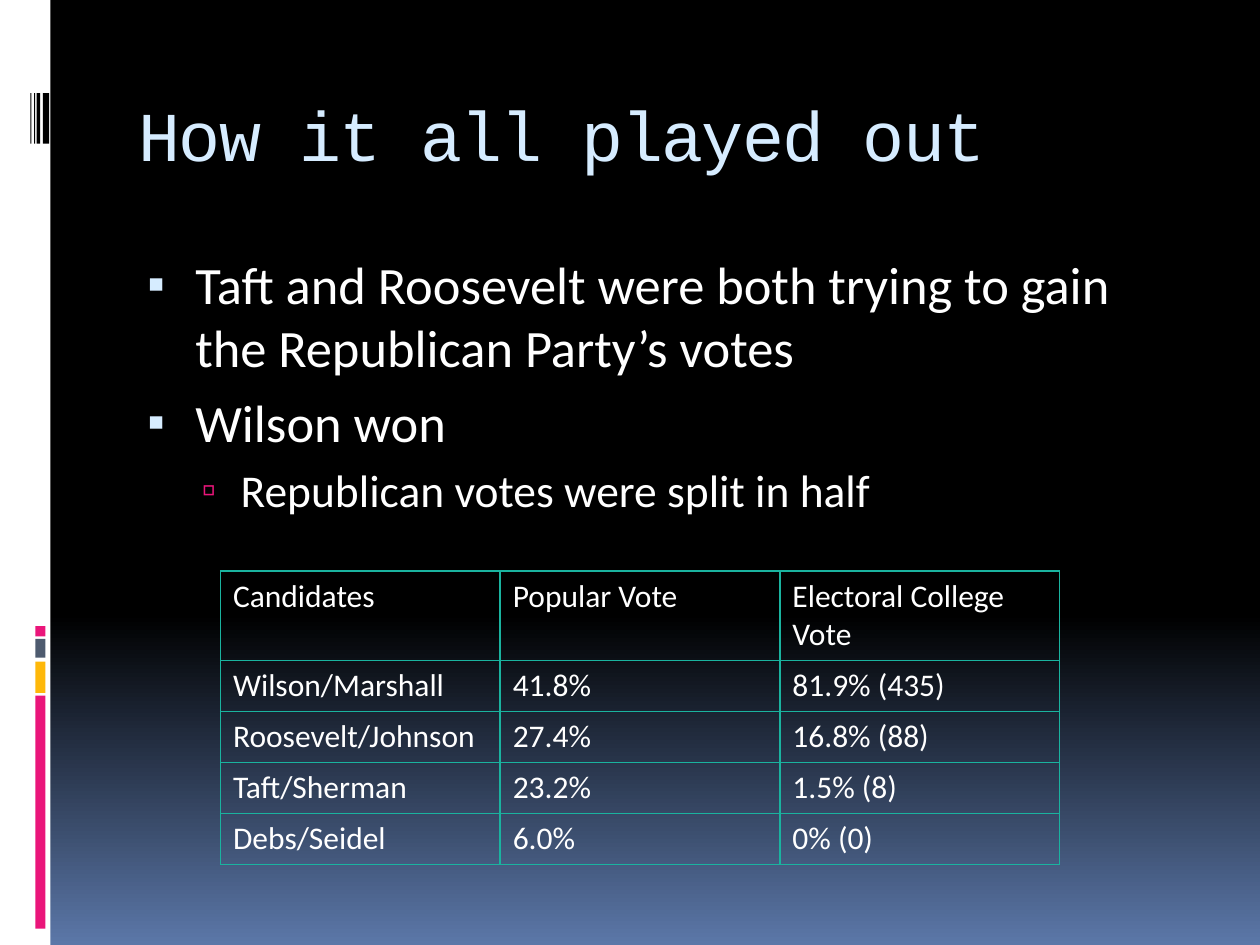
from lxml.etree import SubElement
from pptx import Presentation
from pptx.dml.color import RGBColor
from pptx.enum.shapes import MSO_SHAPE
from pptx.enum.text import MSO_ANCHOR, MSO_AUTO_SIZE, PP_ALIGN
from pptx.oxml.ns import qn
from pptx.util import Inches, Pt


def color(hex_value):
    return RGBColor.from_string(hex_value)


def style(font, name, size, hex_value):
    for key, value in {"name": name, "size": Pt(size), "bold": False}.items():
        setattr(font, key, value)
    font.color.rgb = color(hex_value)


prs = Presentation()
prs.slide_width, prs.slide_height = Inches(10), Inches(7.5)
slide = prs.slides.add_slide(prs.slide_layouts[1])

# Background: black, fading to blue at the bottom
backdrop = slide.background.fill
backdrop.gradient()
backdrop.gradient_angle = 270
for stop, (position, shade) in zip(backdrop.gradient_stops,
                                   [(0.65, "000000"), (1, "5B77A8")]):
    stop.position = position
    stop.color.rgb = color(shade)

# Side band with its coloured blocks and barcode: left, top, width, height
side_band = [(0, 0, 0.4, 7.5, "FFFFFF")]
side_band += [(0.28, top, 0.08, height, shade) for top, height, shade in [
    (5.52, 1.85, "EA157A"), (5.25, 0.25, "FEB80A"),
    (5.07, 0.15, "4E5B6F"), (4.97, 0.08, "EA157A")]]
side_band += [(left, 0.74, width, 0.4, "000000") for left, width in [
    (0.34, 0.05), (0.29, 0.03), (0.27, 0.01), (0.24, 0.01)]]
for *box, shade in side_band:
    block = slide.shapes.add_shape(MSO_SHAPE.RECTANGLE, *map(Inches, box))
    block.shadow.inherit = False
    block.fill.solid()
    block.fill.fore_color.rgb = color(shade)
    block.line.fill.background()

# Title and body placeholders
title, body = slide.shapes.title, slide.placeholders[1]
for holder, box, anchor in [(title, (1, 0.56, 8.5, 1), MSO_ANCHOR.MIDDLE),
                            (body, (1, 1.95, 8.5, 5), MSO_ANCHOR.TOP)]:
    holder.left, holder.top, holder.width, holder.height = map(Inches, box)
    frame_format = {"word_wrap": True, "auto_size": MSO_AUTO_SIZE.NONE,
                    "vertical_anchor": anchor}
    for key, value in frame_format.items():
        setattr(holder.text_frame, key, value)

# Title
title.text_frame.text = "How it all played out"
heading = title.text_frame.paragraphs[0]
heading.alignment = PP_ALIGN.LEFT
style(heading.runs[0].font, "Courier New", 40, "D6ECFF")
heading.runs[0].font._element.set("spc", "-100")

# Bulleted list
levels = [
    {"size": 30, "before": 7, "margin": 0.45, "indent": -0.38,
     "bullet": "▪", "shade": "D6ECFF", "percent": 95},
    {"size": 26, "before": 5.2, "margin": 0.81, "indent": -0.31,
     "bullet": "▫", "shade": "EA157A", "percent": 90},
]
points = [
    (0, "Taft and Roosevelt were both trying to gain the Republican Party’s votes"),
    (0, "Wilson won"),
    (1, "Republican votes were split in half"),
]
body.text_frame.text = "\n".join(text for _, text in points)
for point, (level, _) in zip(body.text_frame.paragraphs, points):
    look = levels[level]
    point.level = level
    point.space_before = Pt(look["before"])
    style(point.runs[0].font, "Calibri", look["size"], "FFFFFF")
    props = point._p.get_or_add_pPr()
    props.set("marL", str(Inches(look["margin"])))
    props.set("indent", str(Inches(look["indent"])))
    bullet_color = SubElement(props, qn("a:buClr"))
    SubElement(bullet_color, qn("a:srgbClr"), val=look["shade"])
    SubElement(props, qn("a:buSzPct"), val=str(look["percent"] * 1000))
    SubElement(props, qn("a:buChar"), char=look["bullet"])

# Election results
results = [
    ("Candidates", "Popular Vote", "Electoral College Vote"),
    ("Wilson/Marshall", "41.8%", "81.9% (435)"),
    ("Roosevelt/Johnson", "27.4%", "16.8% (88)"),
    ("Taft/Sherman", "23.2%", "1.5% (8)"),
    ("Debs/Seidel", "6.0%", "0% (0)"),
]
table = slide.shapes.add_table(len(results), 3, Inches(1.75), Inches(4.53),
                               Inches(6.67), Inches(2.33)).table
table.first_row = table.horz_banding = False
for column in table.columns:
    column.width = Inches(2.22)
for row, record in enumerate(results):
    table.rows[row].height = Inches(0.4 if row else 0.71)
    for col, entry in enumerate(record):
        cell = table.cell(row, col)
        cell.text = entry
        style(cell.text_frame.paragraphs[0].runs[0].font, "Calibri", 18, "FFFFFF")
        cell_props = cell._tc.get_or_add_tcPr()
        for side in ("a:lnL", "a:lnR", "a:lnT", "a:lnB"):
            border = SubElement(cell_props, qn(side), w=str(Pt(1)))
            SubElement(SubElement(border, qn("a:solidFill")),
                       qn("a:srgbClr"), val="1AB39F")
        cell.fill.background()

prs.save("out.pptx")
